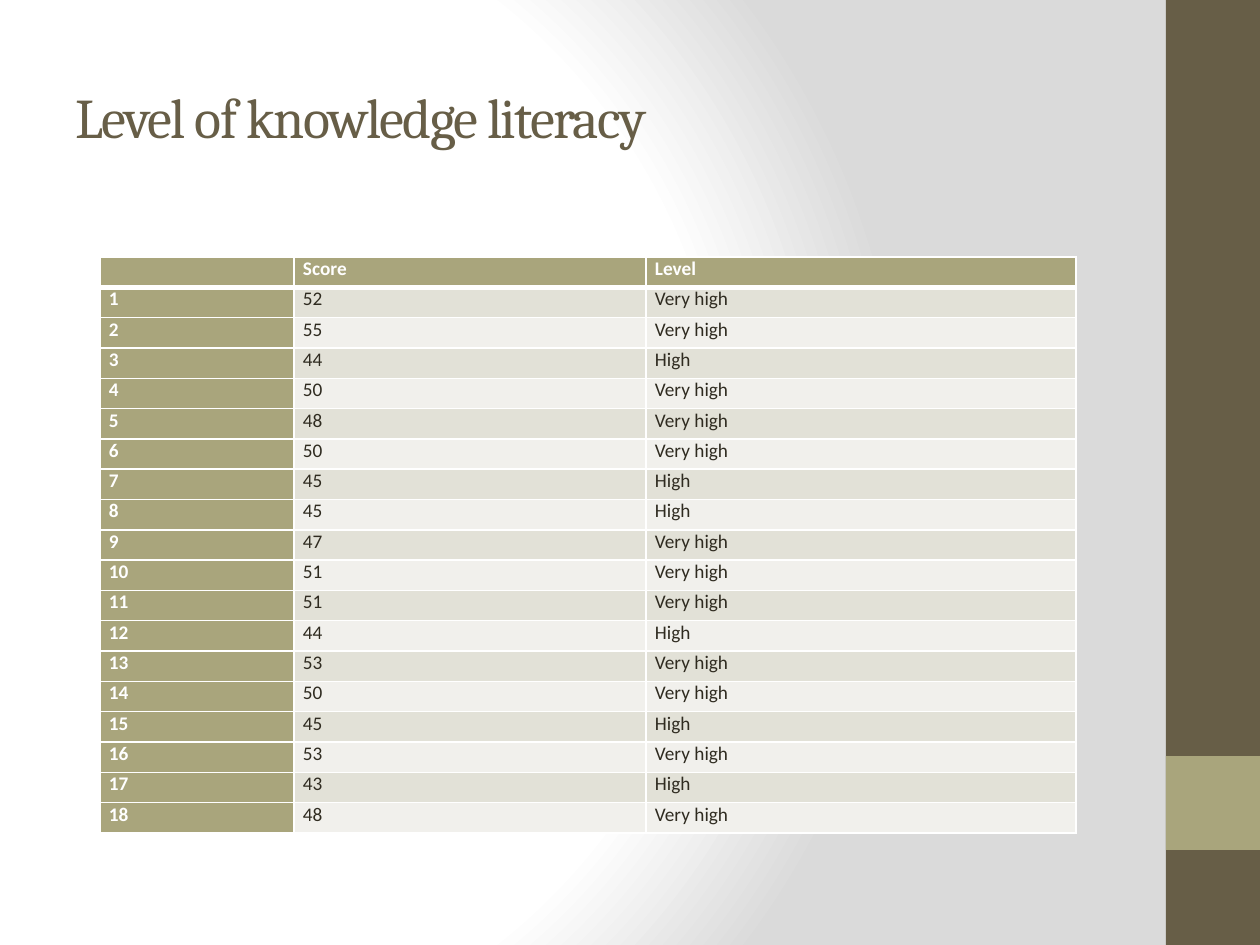
import dataclasses

import pptx
import pptx.dml.color
import pptx.enum.shapes
import pptx.enum.text
import pptx.oxml
import pptx.oxml.ns
import pptx.util

PX = 914400 / 126
SLIDE_BOX = (0, 0, 1260, 945)
TITLE_BOX = (63, 38, 1050, 157)
SIDEBAR_BOX = (1166, 0, 94, 945)
TABLE_BOX = (100, 257, 976, 576)
COLUMN_WIDTHS = (194, 352, 430)

HEADER = ("", "Score", "Level")
RESULTS = [
    (52, "Very high"), (55, "Very high"), (44, "High"),
    (50, "Very high"), (48, "Very high"), (50, "Very high"),
    (45, "High"), (45, "High"), (47, "Very high"),
    (51, "Very high"), (51, "Very high"), (44, "High"),
    (53, "Very high"), (50, "Very high"), (45, "High"),
    (53, "Very high"), (43, "High"), (48, "Very high"),
]


@dataclasses.dataclass(frozen=True)
class Theme:
    dark: str = "675E47"
    accent: str = "A9A57C"
    bands: tuple = ("E2E1D7", "F1F0EC")
    text: str = "2F2B20"
    white: str = "FFFFFF"
    edge: str = "DADADA"
    title_font: str = "Cambria"
    body_font: str = "Calibri"
    title_size: int = 32
    body_size: int = 11


THEME = Theme()


def px(n):
    return pptx.util.Emu(round(n * PX))


def rgb(color):
    return pptx.dml.color.RGBColor.from_string(color)


def place(sp, box):
    sp.left, sp.top, sp.width, sp.height = map(px, box)


def style_font(font, name, size, color, bold=False):
    font.name, font.size, font.bold = name, pptx.util.Pt(size), bold
    font.color.rgb = rgb(color)


def add_background(s):
    """Fill the slide with a radial gradient centred left of the middle."""
    stops = ((0, THEME.white), (75, THEME.white), (100, THEME.edge))
    stop_xml = "".join(
        f'<a:gs pos="{pos * 1000}"><a:srgbClr val="{color}"/></a:gs>'
        for pos, color in stops)
    grad = pptx.oxml.parse_xml(
        f'<a:gradFill {pptx.oxml.ns.nsdecls("a")} rotWithShape="1">'
        f'<a:gsLst>{stop_xml}</a:gsLst><a:path path="circle">'
        '<a:fillToRect l="20000" t="50000" r="100000" b="50000"/>'
        '</a:path></a:gradFill>')
    fill = s.background.fill
    fill.solid()
    solid = s.element.find(".//" + pptx.oxml.ns.qn("p:bgPr"))[0]
    solid.getparent().replace(solid, grad)


def add_rect(s, box, color):
    sp = s.shapes.add_shape(pptx.enum.shapes.MSO_SHAPE.RECTANGLE, *map(px, box))
    sp.shadow.inherit = False
    sp.fill.solid()
    sp.fill.fore_color.rgb = rgb(color)
    sp.line.fill.background()


def add_sidebar(s, box):
    left, top, width, height = box
    add_rect(s, box, THEME.dark)
    add_rect(s, (left, top + height * 4 // 5, width, width), THEME.accent)


def add_title(s, box, text):
    title = s.shapes.title
    place(title, box)
    tf = title.text_frame
    tf.text = text
    tf.word_wrap = True
    tf.vertical_anchor = pptx.enum.text.MSO_ANCHOR.MIDDLE
    p = tf.paragraphs[0]
    p.alignment = pptx.enum.text.PP_ALIGN.LEFT
    r = p.runs[0]
    style_font(r.font, THEME.title_font, THEME.title_size, THEME.dark)
    r.font._element.set("spc", "-100")


def set_borders(cell, **widths):
    """Draw white borders; widths maps L, R, T and B to points."""
    tc_pr = cell._tc.get_or_add_tcPr()
    for i, side in enumerate("LRTB"):
        tc_pr.insert(i, pptx.oxml.parse_xml(
            f'<a:ln{side} {pptx.oxml.ns.nsdecls("a")} '
            f'w="{pptx.util.Pt(widths.get(side, 1))}"><a:solidFill>'
            f'<a:srgbClr val="{THEME.white}"/></a:solidFill></a:ln{side}>'))


def fill_cell(cell, text, fill, color, bold):
    cell.margin_left = cell.margin_right = px(9)
    cell.margin_top = cell.margin_bottom = 0
    cell.fill.solid()
    cell.fill.fore_color.rgb = rgb(fill)
    cell.text_frame.text = text
    p = cell.text_frame.paragraphs[0]
    p.alignment = pptx.enum.text.PP_ALIGN.JUSTIFY
    p.space_after = pptx.util.Pt(10)
    for r in p.runs:
        style_font(r.font, THEME.body_font, THEME.body_size, color, bold)
    if not text:
        # An empty cell takes its line height from the paragraph end mark.
        p._p.get_or_add_endParaRPr().set("sz", str(THEME.body_size * 100))


def add_score_table(s, box):
    rows = [HEADER] + [(str(n), str(score), level)
                       for n, (score, level) in enumerate(RESULTS, 1)]
    frame = s.shapes.add_table(len(rows), len(HEADER), *map(px, box))
    table = frame.table
    table.first_col = True
    for column, width in zip(table.columns, COLUMN_WIDTHS):
        column.width = px(width)
    for i, values in enumerate(rows):
        table.rows[i].height = px(box[3] / len(rows))
        for j, value in enumerate(values):
            cell = table.cell(i, j)
            if i == 0 or j == 0:
                fill_cell(cell, value, THEME.accent, THEME.white, True)
            else:
                fill_cell(cell, value, THEME.bands[(i - 1) % 2], THEME.text, False)
            set_borders(cell, T=3 if i == 1 else 1, B=3 if i == 0 else 1)


def main():
    prs = pptx.Presentation()
    prs.slide_width, prs.slide_height = map(px, SLIDE_BOX[2:])
    s = prs.slides.add_slide(prs.slide_layouts[5])
    add_background(s)
    add_sidebar(s, SIDEBAR_BOX)
    add_title(s, TITLE_BOX, "Level of knowledge literacy")
    add_score_table(s, TABLE_BOX)
    prs.save("out.pptx")


if __name__ == "__main__":
    main()
